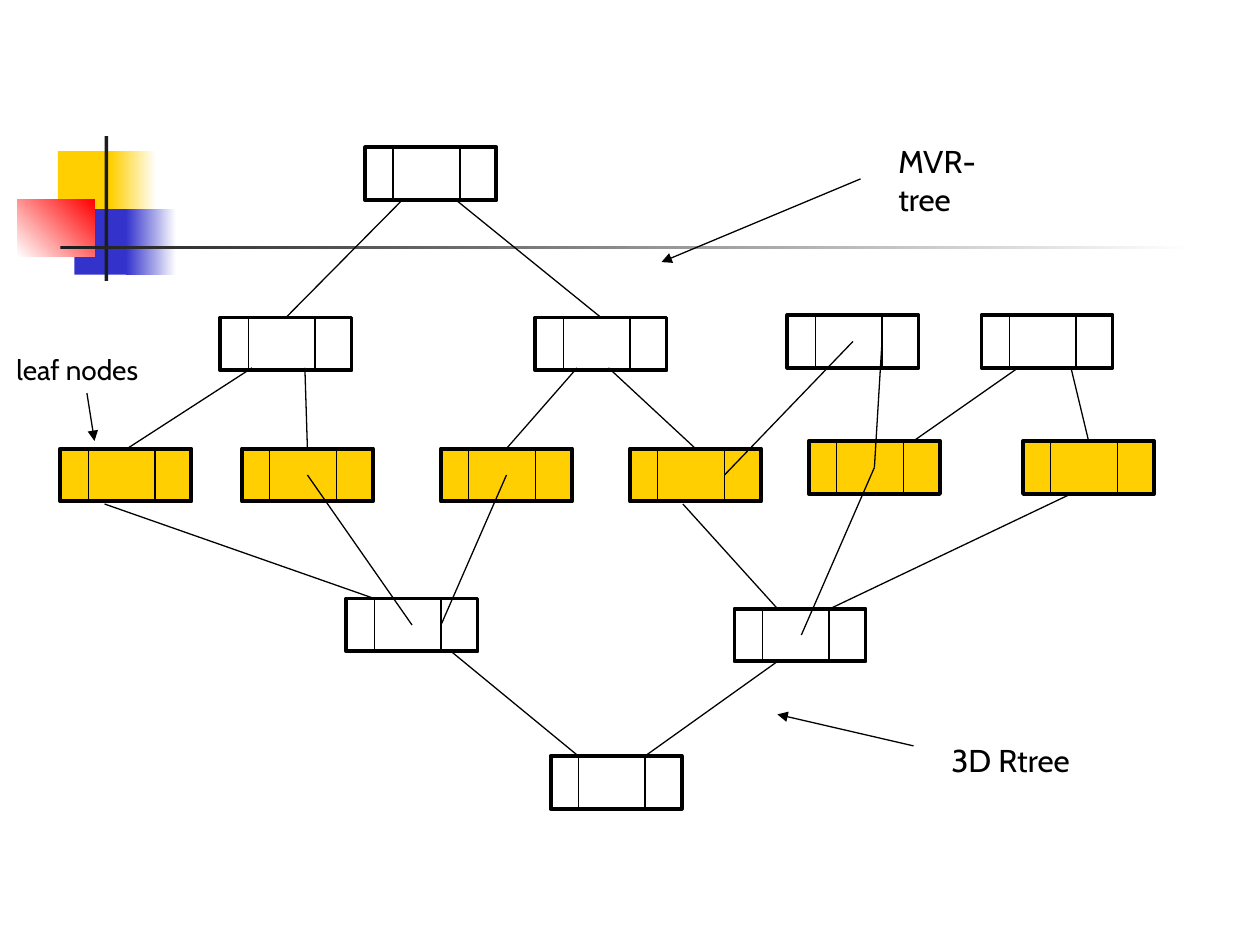
from lxml.etree import SubElement
from pptx import Presentation
from pptx.dml.color import RGBColor
from pptx.enum.shapes import MSO_CONNECTOR as Connector, MSO_SHAPE as Shape
from pptx.oxml.ns import qn
from pptx.util import Emu, Pt

PX = 9144
NODE_WIDTH, NODE_HEIGHT = 104, 42
DIVIDERS = (22, 75)
FONT = "Cabin"
COLORS = {
    "yellow": "FFCF01", "blue": "3333CC", "red": "FF0000",
    "dark": "1C1C1C", "black": "000000", "white": "FFFFFF",
}

INNER_NODES = [
    (290, 117), (175, 252), (425, 252), (625, 250), (779, 250),
    (275, 475), (583, 483), (437, 600),
]
LEAF_NODES = [(48, 356), (192, 356), (350, 356), (500, 356), (642, 350), (812, 350)]

MVR_EDGES = [
    (320, 158, 227, 252), (361, 158, 477, 252),
    (200, 292, 101, 356), (242, 292, 244, 356),
    (458, 292, 402, 356), (483, 292, 552, 356),
    (677, 271, 575, 377), (700, 271, 694, 371),
    (808, 292, 725, 350), (850, 292, 864, 350),
]
RTREE_EDGES = [
    (459, 600, 358, 517), (512, 600, 617, 525),
    (297, 475, 83, 400), (327, 496, 244, 377), (350, 496, 402, 377),
    (617, 483, 542, 400), (636, 504, 694, 371), (659, 483, 850, 392),
]


def px(length):
    """Turn px into EMU."""
    return Emu(round(length * PX))


def rgb(name):
    """Look up a named colour."""
    return RGBColor.from_string(COLORS[name])


def add_box(page, left, top, width, height, fill=None, fade=None, angle=0, line=0):
    """Add a rectangle with a plain, fading or empty fill."""
    box = page.shapes.add_shape(Shape.RECTANGLE, px(left), px(top), px(width), px(height))
    box.shadow.inherit = False
    if fade:
        box.fill.gradient()
        box.fill.gradient_angle = angle
        for stop, name in zip(box.fill.gradient_stops, (fill, fade)):
            stop.color.rgb = rgb(name)
    elif fill:
        box.fill.solid()
        box.fill.fore_color.rgb = rgb(fill)
    else:
        box.fill.background()
    if line:
        box.line.color.rgb = rgb("black")
        box.line.width = Pt(line)
    else:
        box.line.fill.background()
    return box


def add_line(page, x1, y1, x2, y2, arrow=False):
    """Add a thin black line, with an arrowhead at its end if asked."""
    line = page.shapes.add_connector(Connector.STRAIGHT, px(x1), px(y1), px(x2), px(y2))
    line.line.color.rgb = rgb("black")
    line.line.width = Pt(0.75)
    if arrow:
        SubElement(line.line._get_or_add_ln(), qn("a:tailEnd"), type="triangle")
    SubElement(line._element.spPr, qn("a:effectLst"))


def add_text(page, text, left, top, width, height, size=18, color="black"):
    """Add a wrapping text box."""
    box = page.shapes.add_textbox(px(left), px(top), px(width), px(height))
    frame = box.text_frame
    frame.word_wrap = True
    frame.margin_left = frame.margin_right = px(5)
    frame.margin_top = frame.margin_bottom = px(5)
    span = frame.paragraphs[0].add_run()
    span.text = text
    span.font.name = FONT
    span.font.size = Pt(size)
    span.font.color.rgb = rgb(color)


def add_ornament(page, left, top):
    """Add the overlapping squares, the upright and the fading rule."""
    add_box(page, left + 32, top + 12, 48, 52, "yellow")
    add_box(page, left + 74, top + 12, 36, 52, "yellow", "white")
    add_box(page, left + 45, top + 58, 46, 52, "blue")
    add_box(page, left + 86, top + 58, 40, 52, "blue", "white")
    add_box(page, left, top + 50, 61, 46, "white", "red", angle=45)
    add_box(page, left + 69, top, 3, 115, "dark")
    add_box(page, left + 34, top + 87, 900, 3, "dark", "white")


def add_node(page, left, top, fill=None):
    """Add a tree node split into three cells."""
    add_box(page, left, top, NODE_WIDTH, NODE_HEIGHT, fill, line=2.25)
    for offset in DIVIDERS:
        add_line(page, left + offset, top, left + offset, top + NODE_HEIGHT)


def add_trees(page):
    """Add both trees, which share their leaf nodes."""
    for left, top in INNER_NODES:
        add_node(page, left, top)
    for left, top in LEAF_NODES:
        add_node(page, left, top, "yellow")
    for edge in MVR_EDGES + RTREE_EDGES:
        add_line(page, *edge)


def add_labels(page):
    """Add the labels and their arrows."""
    add_text(page, "MVR-tree", 708, 108, 100, 71)
    add_line(page, 683, 142, 525, 208, arrow=True)
    add_text(page, "3D Rtree", 750, 583, 109, 41)
    add_line(page, 725, 592, 617, 567, arrow=True)
    add_text(page, "leaf nodes", 8, 275, 112, 36, size=16)
    add_line(page, 69, 312, 75, 350, arrow=True)


def main():
    """Build the deck."""
    deck = Presentation()
    deck.slide_width, deck.slide_height = px(1000), px(750)
    page = deck.slides.add_slide(deck.slide_layouts[6])
    add_ornament(page, 14, 108)
    add_trees(page)
    add_labels(page)
    deck.save("out.pptx")


if __name__ == "__main__":
    main()
